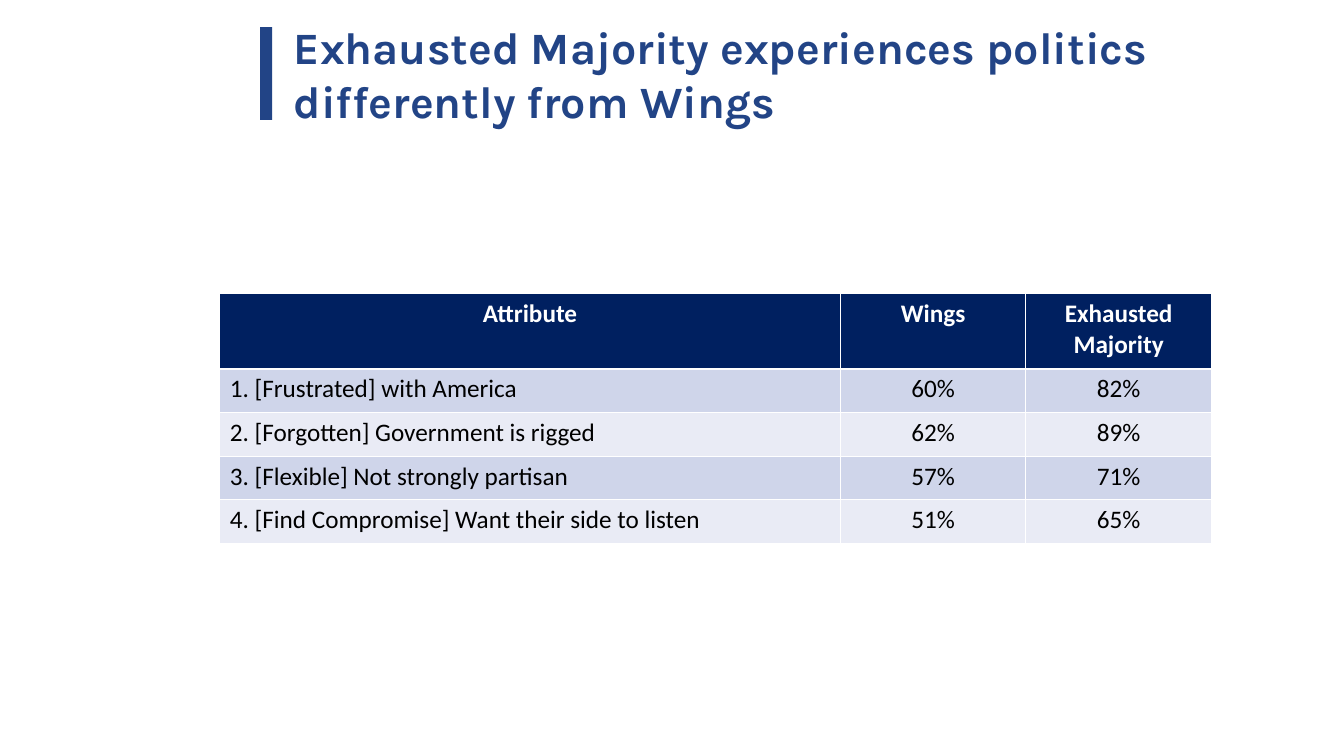
import pptx
import pptx.dml.color
import pptx.enum.shapes
import pptx.enum.text
import pptx.util

Pt = pptx.util.Pt
ALIGN = pptx.enum.text.PP_ALIGN
ANCHOR = pptx.enum.text.MSO_ANCHOR

BLUE = "224486"
NAVY = "002060"
BANDS = ["CFD5EA", "E9EBF5"]

ROWS = [
    ("Attribute", "Wings", "Exhausted Majority"),
    ("1. [Frustrated] with America", "60%", "82%"),
    ("2. [Forgotten] Government is rigged", "62%", "89%"),
    ("3. [Flexible] Not strongly partisan", "57%", "71%"),
    ("4. [Find Compromise] Want their side to listen", "51%", "65%"),
]
COL_WIDTHS = [443.2, 132.6, 132.6]
ROW_HEIGHTS = [54] + [31.2] * 4


def rgb(color):
    return pptx.dml.color.RGBColor.from_string(color)


def set_fill(obj, color):
    obj.fill.solid()
    obj.fill.fore_color.rgb = rgb(color)


def write(tf, text, size=18, font="Calibri", color="000000", bold=False,
          align=ALIGN.LEFT):
    p = tf.paragraphs[0]
    p.alignment = align
    r = p.add_run()
    r.text = text
    r.font.size = Pt(size)
    r.font.name = font
    r.font.bold = bold
    r.font.color.rgb = rgb(color)


def add_title(s, text, left, top, width, height):
    sp = s.shapes.title
    sp.left, sp.top, sp.width, sp.height = map(Pt, (left, top, width, height))
    tf = sp.text_frame
    tf.word_wrap = True
    tf.auto_size = pptx.enum.text.MSO_AUTO_SIZE.NONE
    tf.vertical_anchor = ANCHOR.BOTTOM
    tf.margin_left = tf.margin_right = Pt(9.6)
    tf.margin_top = tf.margin_bottom = Pt(9.6)
    write(tf, text, size=32, font="Karla", color=BLUE, bold=True)


def add_bar(s, left, top, width, height, color):
    sp = s.shapes.add_shape(pptx.enum.shapes.MSO_SHAPE.RECTANGLE,
                            Pt(left), Pt(top), Pt(width), Pt(height))
    sp.shadow.inherit = False
    set_fill(sp, color)
    sp.line.fill.background()


def add_table(s, rows, left, top, col_widths, row_heights):
    table = s.shapes.add_table(
        len(rows), len(col_widths), Pt(left), Pt(top),
        Pt(sum(col_widths)), Pt(sum(row_heights))).table
    for col, width in zip(table.columns, col_widths):
        col.width = Pt(width)
    for row, height in zip(table.rows, row_heights):
        row.height = Pt(height)
    for i, texts in enumerate(rows):
        header = i == 0
        for j, text in enumerate(texts):
            cell = table.cell(i, j)
            set_fill(cell, NAVY if header else BANDS[(i - 1) % 2])
            write(cell.text_frame, text, bold=header,
                  color="FFFFFF" if header else "000000",
                  align=ALIGN.CENTER if header or j else ALIGN.LEFT)


def main():
    prs = pptx.Presentation()
    prs.slide_width, prs.slide_height = Pt(960), Pt(540)
    s = prs.slides.add_slide(prs.slide_layouts.get_by_name("Title Only"))
    add_title(s, "Exhausted Majority experiences politics differently from Wings",
              200.2, 42.5, 681.8, 58.3)
    add_bar(s, 185.8, 19.4, 8.6, 66.2, BLUE)
    add_table(s, ROWS, 157, 209.5, COL_WIDTHS, ROW_HEIGHTS)
    prs.save("out.pptx")


if __name__ == "__main__":
    main()
